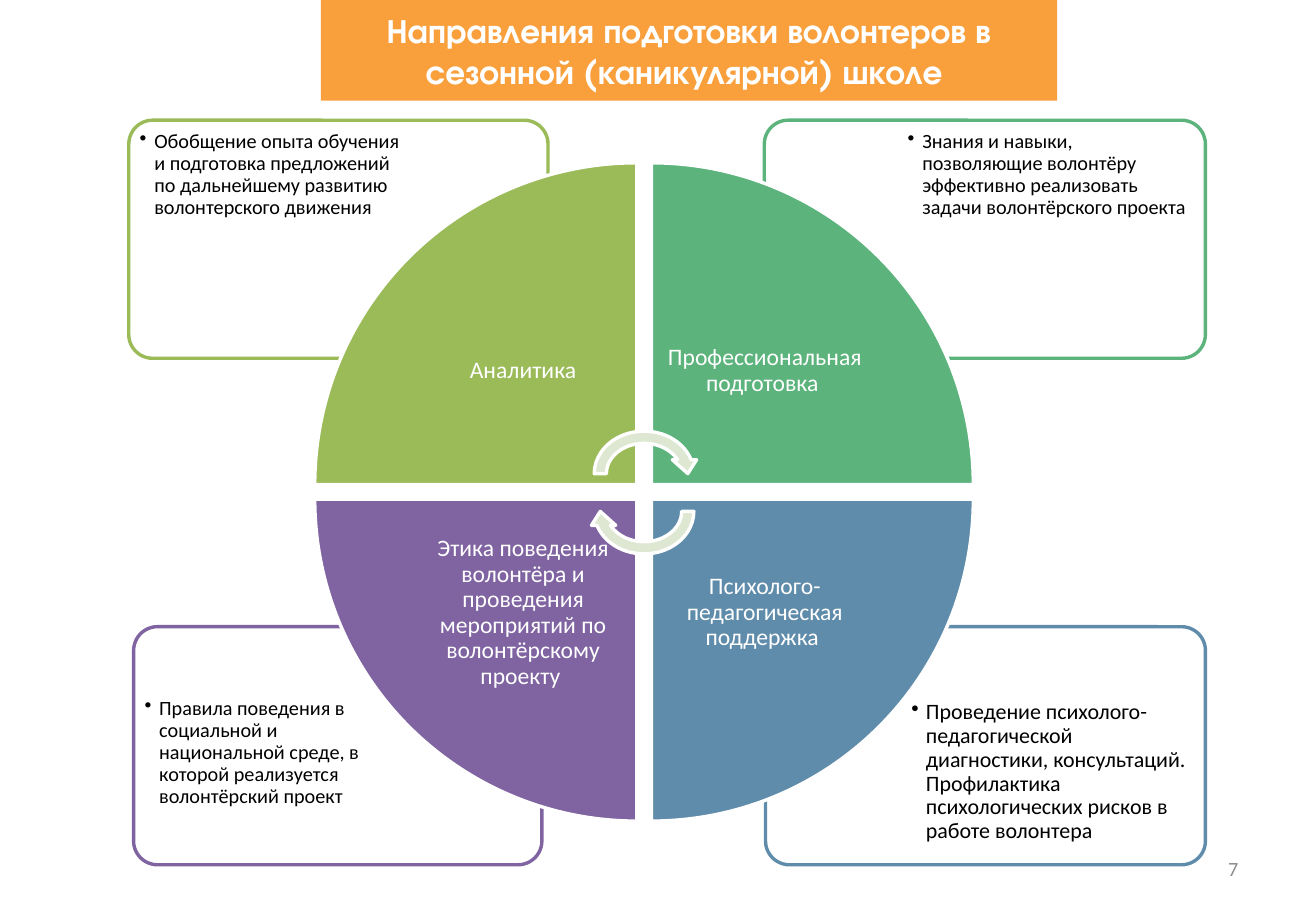
from lxml import etree
from pptx import Presentation
from pptx.dml.color import RGBColor
from pptx.enum.shapes import MSO_SHAPE
from pptx.enum.text import MSO_ANCHOR, PP_ALIGN
from pptx.oxml.ns import qn
from pptx.util import Pt

RECT, ROUND = MSO_SHAPE.RECTANGLE, MSO_SHAPE.ROUNDED_RECTANGLE
WEDGE, ARROW = MSO_SHAPE.PIE_WEDGE, MSO_SHAPE.CIRCULAR_ARROW
TOP, MIDDLE = MSO_ANCHOR.TOP, MSO_ANCHOR.MIDDLE
LEFT, CENTER, RIGHT = PP_ALIGN.LEFT, PP_ALIGN.CENTER, PP_ALIGN.RIGHT

PX = 9144  # 100 px to the inch
BODY, HEAD = "Calibri", "TeX Gyre Adventor"
COLORS = {
    "orange": "F99F3C", "green": "9BBB59", "mint": "5CB37C",
    "blue": "608CAB", "purple": "8064A2", "pale": "DEE7D1",
    "white": "FFFFFF", "black": "000000", "gray": "8C8C8C",
}

TITLE = "Направления подготовки волонтеров в сезонной (каникулярной) школе "
NUMBER = "7"
# column, row, turn, color, label, note, note size, note inset, box left, box width
PARTS = [
    (0, 0, 0, "green", "Аналитика",
     "Обобщение опыта обучения и подготовка предложений по дальнейшему "
     "развитию волонтерского движения", 12, 5, 106, 345),
    (1, 0, 90, "mint", "Профессиональная подготовка ",
     "Знания и навыки, позволяющие волонтёру эффективно реализовать задачи "
     "волонтёрского проекта", 12, 5, 629, 363),
    (1, 1, 180, "blue", "Психолого-педагогическая поддержка ",
     "Проведение психолого-педагогической диагностики, консультаций. "
     "Профилактика психологических рисков в работе волонтера", 13, 7, 630, 362),
    (0, 1, 270, "purple",
     "Этика поведения волонтёра и проведения мероприятий по волонтёрскому проекту ",
     "Правила поведения в социальной и национальной среде, в которой "
     "реализуется волонтёрский проект", 12, 5, 110, 336),
]
ARROWS = [(350, 0), (381, 180)]  # top, turn

PIE_X, PIE_Y, SIDE, GAP = 259, 134, 265, 12
LABEL = 187
BOX_TOPS, BOX_H = (99, 516), 196
NOTE_H, EDGE = 138, 4

prs = Presentation()
prs.slide_width, prs.slide_height = 1083 * PX, 750 * PX
slide = prs.slides.add_slide(prs.slide_layouts[6])
shapes = slide.shapes


def rgb(name):
    return RGBColor.from_string(COLORS[name])


def scale(*box):
    return [round(v) * PX for v in box]


def draw(kind, box, fill, line=None, turn=0):
    shape = shapes.add_shape(kind, *scale(*box))
    shape.shadow.inherit = False
    shape.rotation = turn
    shape.fill.solid()
    shape.fill.fore_color.rgb = rgb(fill)
    if line:
        shape.line.color.rgb = rgb(line)
        shape.line.width = Pt(2)
    else:
        shape.line.fill.background()
    return shape


def write(box, text, size, color, align=CENTER, anchor=MIDDLE, inset=10,
          face=BODY, bold=False, space=None, bullet=False):
    frame = shapes.add_textbox(*scale(*box)).text_frame
    frame.word_wrap = True
    frame.vertical_anchor = anchor
    frame.margin_left = frame.margin_right = inset * PX
    frame.margin_top = frame.margin_bottom = min(inset, 11) * PX
    para = frame.paragraphs[0]
    para.text = text
    para.alignment = align
    para.line_spacing = space
    if bullet:
        props = para._p.get_or_add_pPr()
        props.set("marL", str(12 * PX))
        props.set("indent", str(-12 * PX))
        etree.SubElement(props, qn("a:buChar"), char="•")
    font = para.font
    font.name, font.size, font.bold = face, Pt(size), bold
    font.color.rgb = rgb(color)


banner = (264, 0, 606, 83)
draw(RECT, banner, "orange")
write(banner, TITLE, 20, "white", face=HEAD, bold=True, inset=5)
write((776, 695, 253, 40), NUMBER, 12, "gray", align=RIGHT)

for col, row, _, color, _, note, size, inset, x, w in PARTS:
    y = BOX_TOPS[row]
    draw(ROUND, (x, y, w, BOX_H), "white", color).adjustments[0] = 0.1
    note_w = 0.7 * w - 2 * EDGE
    note_x = x + EDGE + col * (w - 2 * EDGE - note_w)
    note_y = y + EDGE + row * (BOX_H - 2 * EDGE - NOTE_H)
    write((note_x, note_y, note_w, NOTE_H), note, size, "black", LEFT, TOP,
          inset, space=0.9, bullet=True)

for col, row, turn, color, label, *_ in PARTS:
    x, y = PIE_X + col * (SIDE + GAP), PIE_Y + row * (SIDE + GAP)
    draw(WEDGE, (x, y, SIDE, SIDE), color, "white", turn)
    inner = SIDE - LABEL
    write((x + (1 - col) * inner, y + (1 - row) * inner, LABEL, LABEL),
          label, 14, "white", inset=11, space=0.9)

for y, turn in ARROWS:
    draw(ARROW, (484, y, 92, 80), "pale", "white", turn)

prs.save("out.pptx")
